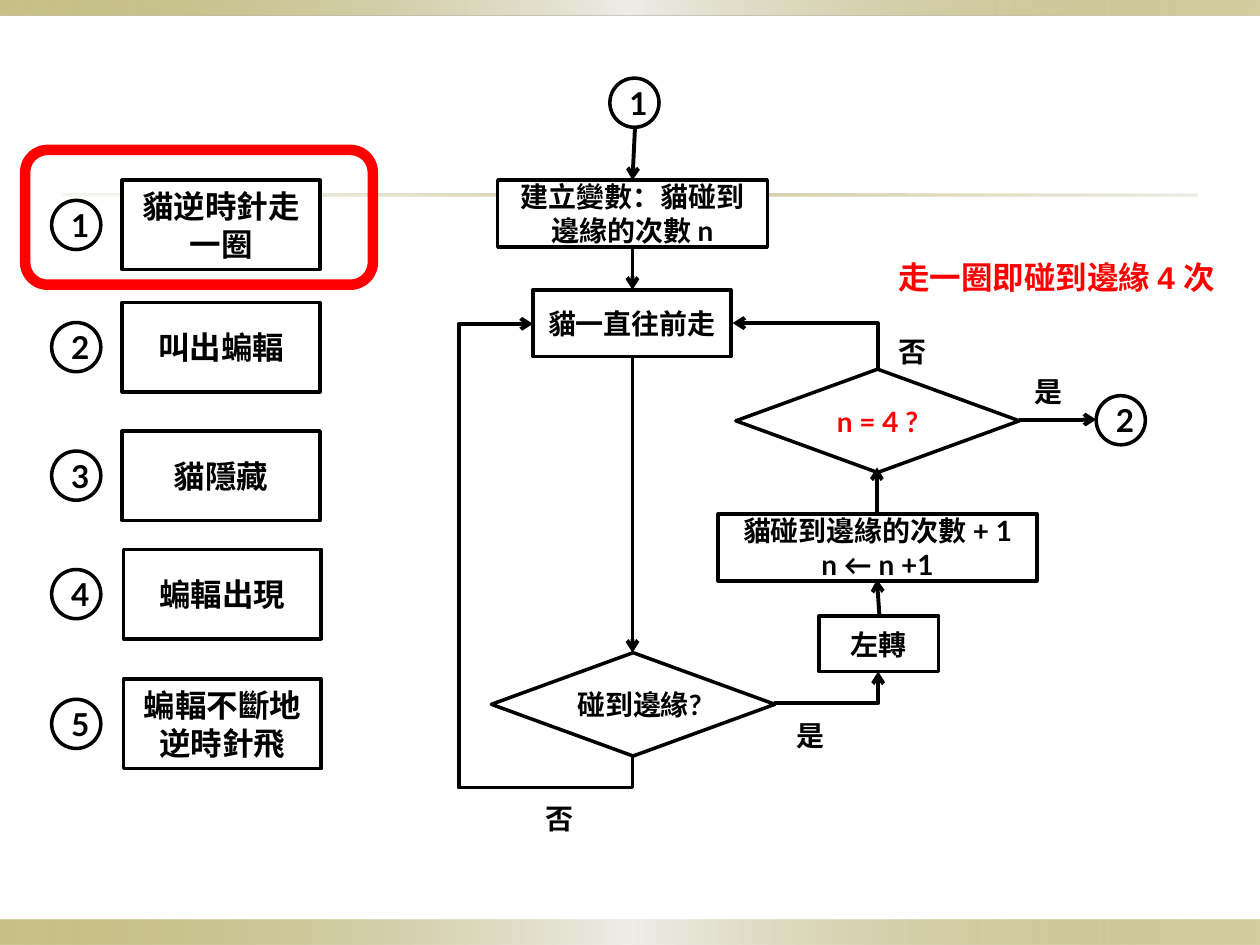
from dataclasses import dataclass

from lxml import etree
from pptx import Presentation
from pptx.dml.color import RGBColor
from pptx.enum.shapes import MSO_CONNECTOR, MSO_SHAPE
from pptx.enum.text import MSO_ANCHOR, MSO_AUTO_SIZE, PP_ALIGN
from pptx.oxml.ns import qn
from pptx.util import Inches, Length, Pt

RECTANGLE = MSO_SHAPE.RECTANGLE
ROUNDED = MSO_SHAPE.ROUNDED_RECTANGLE
PROCESS = MSO_SHAPE.FLOWCHART_PROCESS
DECISION = MSO_SHAPE.FLOWCHART_DECISION
CIRCLE = MSO_SHAPE.FLOWCHART_CONNECTOR
STRAIGHT = MSO_CONNECTOR.STRAIGHT
ELBOW = MSO_CONNECTOR.ELBOW
MIDDLE = MSO_ANCHOR.MIDDLE
FIT_SHAPE = MSO_AUTO_SIZE.SHAPE_TO_FIT_TEXT
LEFT = PP_ALIGN.LEFT
CENTER = PP_ALIGN.CENTER

BLACK = RGBColor(0x00, 0x00, 0x00)
WHITE = RGBColor(0xFF, 0xFF, 0xFF)
RED = RGBColor(0xFF, 0x00, 0x00)
OLIVE = RGBColor(0x91, 0x84, 0x15)
PALE = RGBColor(0xEE, 0xED, 0xE8)
SAND = RGBColor(0xDC, 0xD9, 0xCC)

COLUMNS, ROWS = 100, 75
CIRCLE_SIZE = 3.9
CIRCLE_DROP = 1.6
STEP_WIDTH, STEP_HEIGHT = 15.7, 7.1


@dataclass(frozen=True)
class Box:
    left: float
    top: float
    width: float
    height: float


@dataclass(frozen=True)
class Step:
    text: str
    left: float
    top: float


@dataclass(frozen=True)
class Node:
    kind: MSO_SHAPE
    box: Box
    text: str
    size: int = 16
    color: RGBColor = BLACK


@dataclass(frozen=True)
class Label:
    box: Box
    text: str
    size: int = 16
    color: RGBColor = BLACK
    font: str = "Lato"
    wrap: bool = False


@dataclass(frozen=True)
class Bend:
    box: Box
    preset: str
    rotation: int
    flip: str
    adjustments: tuple[int, ...] = ()


@dataclass(frozen=True)
class Stop:
    position: int
    color: RGBColor
    opacity: int = 100


BAR_STOPS = (Stop(0, OLIVE, 50), Stop(50, PALE), Stop(100, OLIVE, 40))
RULE_STOPS = (Stop(0, SAND, 20), Stop(50, OLIVE, 40), Stop(100, SAND, 50))
BANDS = (
    (Box(0, 73, 100, 2), BAR_STOPS),
    (Box(0, 0, 100, 1.2), BAR_STOPS),
    (Box(5, 15.4, 90, 0.2), RULE_STOPS),
)
STEPS = (
    Step("貓逆時針走一圈", 9.7, 14.3),
    Step("叫出蝙輻", 9.7, 24),
    Step("貓隱藏", 9.7, 34.2),
    Step("蝙輻出現", 9.8, 43.6),
    Step("蝙輻不斷地逆時針飛", 9.8, 53.9),
)
NODES = (
    Node(CIRCLE, Box(48.4, 6.2, CIRCLE_SIZE, CIRCLE_SIZE), "1", 18),
    Node(PROCESS, Box(39.5, 14.3, 21.4, 5.3), "建立變數：貓碰到邊緣的次數 n"),
    Node(PROCESS, Box(42.3, 23, 15.7, 5.3), "貓一直往前走"),
    Node(DECISION, Box(39, 51.8, 22.5, 8.2), "碰到邊緣?"),
    Node(PROCESS, Box(65, 48.9, 9.5, 4.4), "左轉"),
    Node(PROCESS, Box(57, 40.8, 25.3, 5.3), "貓碰到邊緣的次數 + 1\nn ← n +1"),
    Node(DECISION, Box(58.4, 29.3, 22.5, 8.2), "n = 4 ?", color=RED),
    Node(CIRCLE, Box(87, 31.4, CIRCLE_SIZE, CIRCLE_SIZE), "2", 18),
)
ARROWS = (
    ((50.4, 10.1), (50.2, 14.3)),
    ((50.2, 19.6), (50.2, 23)),
    ((50.2, 28.3), (50.2, 51.8)),
    ((69.8, 48.9), (69.6, 46)),
    ((69.6, 40.8), (69.6, 37.1)),
    ((80.9, 33.3), (87, 33.3)),
)
BENDS = (
    Bend(Box(29.1, 38.9, 34.3, 7.9), "bentConnector4", 90, "flipH", (-7300, 174600)),
    Bend(Box(61.4, 53.3, 8.3, 2.5), "bentConnector2", 0, "flipV"),
    Bend(Box(62.1, 21.7, 3.6, 11.5), "bentConnector2", 270, "flipV"),
)
LABELS = (
    Label(Box(62.2, 56.5, 4.3, 3.7), "是"),
    Label(Box(42.3, 63.1, 4.3, 3.7), "否"),
    Label(Box(70.3, 26.1, 4.3, 3.7), "否"),
    Label(Box(81.1, 29.2, 4.3, 3.7), "是"),
    Label(Box(70.3, 20, 27.5, 4), "走一圈即碰到邊緣 4 次", 18, RED, "Arial", True),
)

presentation = Presentation()
presentation.slide_width = Inches(10)
presentation.slide_height = Inches(7.5)
slide = presentation.slides.add_slide(presentation.slide_layouts[6])


def across(columns: float) -> Length:
    return Length(round(presentation.slide_width * columns / COLUMNS))


def down(rows: float) -> Length:
    return Length(round(presentation.slide_height * rows / ROWS))


def place(box: Box) -> tuple[Length, Length, Length, Length]:
    return across(box.left), down(box.top), across(box.width), down(box.height)


def write(frame, text: str, *, size: int, color: RGBColor, font="Lato", align=CENTER) -> None:
    frame.text = text
    for paragraph in frame.paragraphs:
        paragraph.alignment = align
        for run in paragraph.runs:
            run.font.name = font
            run.font.size = Pt(size)
            run.font.bold = True
            run.font.color.rgb = color


def draw_shape(kind: MSO_SHAPE, box: Box):
    shape = slide.shapes.add_shape(kind, *place(box))
    shape.shadow.inherit = False
    return shape


def draw_band(box: Box, stops: tuple[Stop, ...]) -> None:
    shape = draw_shape(RECTANGLE, box)
    shape.line.fill.background()
    shape.fill.gradient()
    shape.fill.gradient_angle = 0
    stop_list = shape._element.spPr.find(".//" + qn("a:gsLst"))
    for child in list(stop_list):
        stop_list.remove(child)
    for stop in stops:
        entry = etree.SubElement(stop_list, qn("a:gs"), pos=str(stop.position * 1000))
        color = etree.SubElement(entry, qn("a:srgbClr"), val=str(stop.color))
        etree.SubElement(color, qn("a:alpha"), val=str(stop.opacity * 1000))


def draw_node(node: Node) -> None:
    shape = draw_shape(node.kind, node.box)
    shape.fill.solid()
    shape.fill.fore_color.rgb = WHITE
    shape.line.color.rgb = BLACK
    shape.line.width = Pt(2)
    shape.text_frame.word_wrap = True
    shape.text_frame.vertical_anchor = MIDDLE
    write(shape.text_frame, node.text, size=node.size, color=node.color)


def draw_step(number: int, step: Step) -> None:
    draw_node(Node(PROCESS, Box(step.left, step.top, STEP_WIDTH, STEP_HEIGHT), step.text, 18))
    circle = Box(4.1, step.top + CIRCLE_DROP, CIRCLE_SIZE, CIRCLE_SIZE)
    draw_node(Node(CIRCLE, circle, str(number), 18))


def draw_arrow(start: tuple[float, float], end: tuple[float, float], kind=STRAIGHT):
    connector = slide.shapes.add_connector(
        kind, across(start[0]), down(start[1]), across(end[0]), down(end[1])
    )
    connector.line.color.rgb = BLACK
    connector.line.width = Pt(2.25)
    properties = connector._element.spPr
    etree.SubElement(properties.find(qn("a:ln")), qn("a:tailEnd"), type="arrow")
    etree.SubElement(properties, qn("a:effectLst"))
    return connector


def draw_bend(bend: Bend) -> None:
    box = bend.box
    end = (box.left + box.width, box.top + box.height)
    properties = draw_arrow((box.left, box.top), end, ELBOW)._element.spPr
    transform = properties.find(qn("a:xfrm"))
    transform.set("rot", str(bend.rotation * 60000))
    transform.set(bend.flip, "1")
    geometry = properties.find(qn("a:prstGeom"))
    geometry.set("prst", bend.preset)
    guides = geometry.find(qn("a:avLst"))
    for number, value in enumerate(bend.adjustments, 1):
        etree.SubElement(guides, qn("a:gd"), name=f"adj{number}", fmla=f"val {value}")


def draw_label(label: Label) -> None:
    frame = slide.shapes.add_textbox(*place(label.box)).text_frame
    frame.word_wrap = label.wrap
    frame.auto_size = FIT_SHAPE
    write(frame, label.text, size=label.size, color=label.color, font=label.font, align=LEFT)


def main() -> None:
    for box, stops in BANDS:
        draw_band(box, stops)
    for number, step in enumerate(STEPS, 1):
        draw_step(number, step)
    for node in NODES:
        draw_node(node)
    highlight = draw_shape(ROUNDED, Box(2, 11.9, 27.6, 10.7))
    highlight.fill.background()
    highlight.line.color.rgb = RED
    highlight.line.width = Pt(6)
    for start, end in ARROWS:
        draw_arrow(start, end)
    for bend in BENDS:
        draw_bend(bend)
    for label in LABELS:
        draw_label(label)
    presentation.save("out.pptx")


if __name__ == "__main__":
    main()
